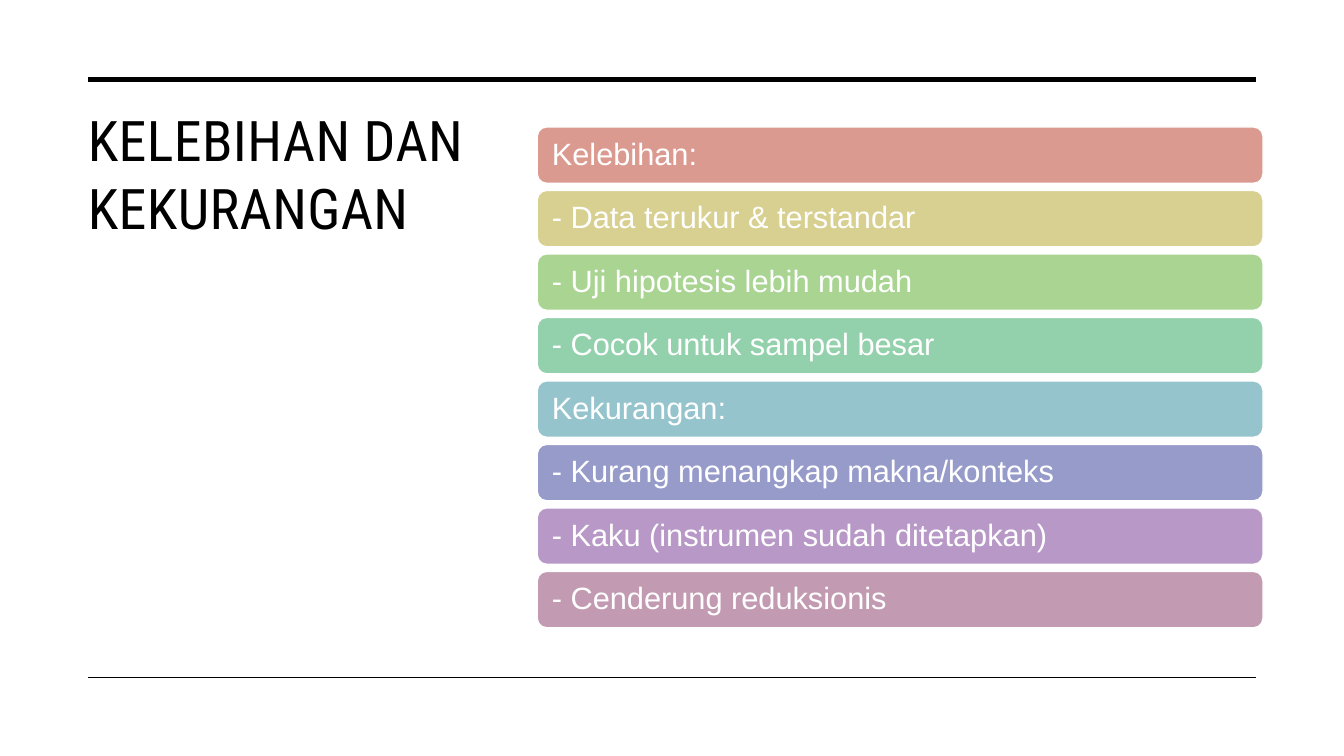
from lxml.etree import SubElement
from pptx import Presentation
from pptx.dml.color import RGBColor
from pptx.enum.shapes import MSO_CONNECTOR, MSO_SHAPE
from pptx.enum.text import MSO_ANCHOR, MSO_AUTO_SIZE, PP_ALIGN
from pptx.oxml.ns import qn
from pptx.util import Cm, Pt

BLACK = RGBColor(0x00, 0x00, 0x00)
WHITE = RGBColor(0xFF, 0xFF, 0xFF)

TITLE = "KELEBIHAN DAN KEKURANGAN"
BARS = [
    ("Kelebihan:", RGBColor(0xDB, 0x9A, 0x8F)),
    ("- Data terukur & terstandar", RGBColor(0xD8, 0xD0, 0x90)),
    ("- Uji hipotesis lebih mudah", RGBColor(0xA9, 0xD4, 0x92)),
    ("- Cocok untuk sampel besar", RGBColor(0x93, 0xD1, 0xAC)),
    ("Kekurangan:", RGBColor(0x95, 0xC4, 0xCD)),
    ("- Kurang menangkap makna/konteks", RGBColor(0x96, 0x9B, 0xCA)),
    ("- Kaku (instrumen sudah ditetapkan)", RGBColor(0xB7, 0x98, 0xC6)),
    ("- Cenderung reduksionis", RGBColor(0xC2, 0x9A, 0xB1)),
]
RULES = [(2.01, 3.5), (17.07, 1)]
RULE_LEFT, RULE_RIGHT = 2.23, 31.65
BAR_LEFT, BAR_TOP, BAR_WIDTH, BAR_HEIGHT = 13.54, 3.2, 18.29, 1.42
BAR_PITCH = 1.6


def add_text(paragraph, text, font_name, size, color):
    run = paragraph.add_run()
    run.text = text
    run.font.name = font_name
    run.font.size = Pt(size)
    run.font.color.rgb = color
    return run


def add_title(slide):
    title = slide.shapes.title
    title.left, title.top, title.width, title.height = Cm(1.96), Cm(2.54), Cm(10.16), Cm(12.24)
    frame = title.text_frame
    frame.word_wrap = True
    frame.auto_size = MSO_AUTO_SIZE.NONE
    frame.vertical_anchor = MSO_ANCHOR.TOP
    paragraph = frame.paragraphs[0]
    paragraph.alignment = PP_ALIGN.LEFT
    run = add_text(paragraph, TITLE, "Roboto Condensed", 40, BLACK)
    run.font._element.set("spc", "30")


def add_rule(slide, top, weight):
    rule = slide.shapes.add_connector(
        MSO_CONNECTOR.STRAIGHT, Cm(RULE_LEFT), Cm(top), Cm(RULE_RIGHT), Cm(top))
    rule.line.color.rgb = BLACK
    rule.line.width = Pt(weight)
    SubElement(rule._element.spPr, qn("a:effectLst"))


def add_bar(slide, index, text, color):
    bar = slide.shapes.add_shape(
        MSO_SHAPE.ROUNDED_RECTANGLE, Cm(BAR_LEFT), Cm(BAR_TOP + index * BAR_PITCH),
        Cm(BAR_WIDTH), Cm(BAR_HEIGHT))
    bar.shadow.inherit = False
    bar.fill.solid()
    bar.fill.fore_color.rgb = color
    bar.line.color.rgb = WHITE
    bar.line.width = Pt(1)
    frame = bar.text_frame
    frame.word_wrap = True
    frame.vertical_anchor = MSO_ANCHOR.MIDDLE
    frame.margin_left = frame.margin_right = Cm(0.3)
    paragraph = frame.paragraphs[0]
    paragraph.alignment = PP_ALIGN.LEFT
    paragraph.line_spacing = 0.9
    add_text(paragraph, text, "Arial", 22, WHITE)


def main():
    """Build the slide on strengths and weaknesses."""
    presentation = Presentation()
    presentation.slide_width, presentation.slide_height = Cm(33.87), Cm(19.05)
    slide = presentation.slides.add_slide(presentation.slide_layouts.get_by_name("Title Only"))
    add_title(slide)
    for top, weight in RULES:
        add_rule(slide, top, weight)
    for index, (text, color) in enumerate(BARS):
        add_bar(slide, index, text, color)
    presentation.save("out.pptx")


if __name__ == "__main__":
    main()
